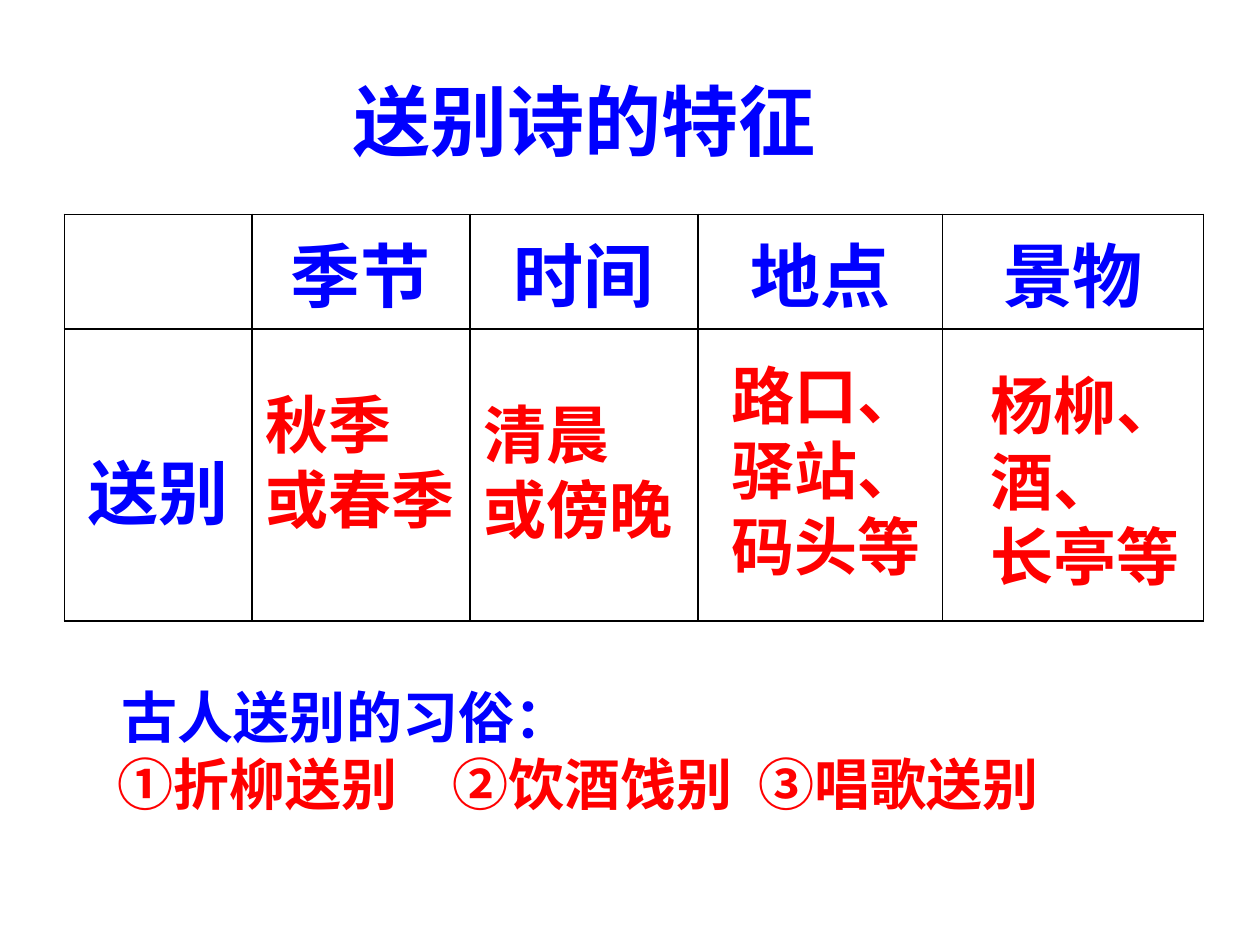
from dataclasses import dataclass

from lxml import etree
from pptx import Presentation
from pptx.dml.color import RGBColor
from pptx.enum.text import MSO_ANCHOR, PP_ALIGN
from pptx.oxml.ns import qn
from pptx.util import Cm, Pt

MIDDLE, BOTTOM = MSO_ANCHOR.MIDDLE, MSO_ANCHOR.BOTTOM
CENTER, LEFT = PP_ALIGN.CENTER, PP_ALIGN.LEFT


@dataclass(frozen=True)
class Theme:
    font: str = "Noto Sans CJK SC"
    blue: RGBColor = RGBColor(0, 0, 255)
    red: RGBColor = RGBColor(255, 0, 0)
    rule: str = "000000"
    title: int = 44
    head: int = 40
    body: int = 36
    note: int = 32
    lead: float = 1.2


THEME = Theme()


def add_run(para, text, size, color):
    run = para.add_run()
    run.text = text
    font = run.font
    font.name, font.size, font.bold = THEME.font, Pt(size), True
    font.color.rgb = color
    east = etree.SubElement(run._r.get_or_add_rPr(), qn("a:ea"))
    east.set("typeface", THEME.font)


def set_line(para, text, size, color, align=LEFT):
    para.alignment = align
    para.line_spacing = Pt(size * THEME.lead)
    add_run(para, text, size, color)


def add_box(slide, box):
    frame = slide.shapes.add_textbox(*map(Cm, box)).text_frame
    frame.word_wrap = True
    frame.margin_top, frame.margin_right = Cm(0.25), 0
    return frame


def add_lines(frame, lines, size):
    for i, (text, color) in enumerate(lines):
        para = frame.add_paragraph() if i else frame.paragraphs[0]
        set_line(para, text, size, color)


def add_title(slide, box, text):
    frame = slide.shapes.add_textbox(*map(Cm, box)).text_frame
    frame.word_wrap = True
    frame.vertical_anchor = MIDDLE
    para = frame.paragraphs[0]
    para.alignment = CENTER
    add_run(para, text, THEME.title, THEME.blue)


def set_edges(cell):
    props = cell._tc.get_or_add_tcPr()
    for i, side in enumerate(("lnL", "lnR", "lnT", "lnB")):
        line = etree.Element(qn(f"a:{side}"), w=str(Pt(1)))
        fill = etree.SubElement(line, qn("a:solidFill"))
        etree.SubElement(fill, qn("a:srgbClr"), val=THEME.rule)
        props.insert(i, line)


def add_grid(slide, left, top, cols, rows, words):
    shape = slide.shapes.add_table(len(rows), len(cols), Cm(left), Cm(top),
                                   Cm(sum(cols)), Cm(sum(rows)))
    table = shape.table
    table.first_row = table.horz_banding = False
    for col, width in zip(table.columns, cols):
        col.width = Cm(width)
    for row, height in zip(table.rows, rows):
        row.height = Cm(height)
    for cell in table.iter_cells():
        cell.fill.background()
        set_edges(cell)
    for (row, col), word in words.items():
        cell = table.cell(row, col)
        cell.vertical_anchor = BOTTOM
        if row:
            cell.margin_bottom = Cm(1.65)
        set_line(cell.text_frame.paragraphs[0], word,
                 THEME.head, THEME.blue, CENTER)


def add_notes(slide, box, head, items, stops):
    frame = add_box(slide, box)
    frame.margin_left = Cm(1.27)
    add_lines(frame, [(head, THEME.blue), ("\t".join(items), THEME.red)],
              THEME.note)
    first, second = frame.paragraphs
    first._p.get_or_add_pPr().set("marL", str(Cm(0.1)))
    tabs = etree.SubElement(second._p.get_or_add_pPr(), qn("a:tabLst"))
    for stop in stops:
        etree.SubElement(tabs, qn("a:tab"), pos=str(Cm(stop)), algn="l")


def main():
    deck = Presentation()
    deck.slide_width, deck.slide_height = Cm(25.4), Cm(19.05)
    slide = deck.slides.add_slide(deck.slide_layouts[6])

    # Title
    add_title(slide, (2.69, 1.12, 18.21, 2.57), "送别诗的特征")

    # Table with its headings
    words = {(0, i): word for i, word in
             enumerate(("季节", "时间", "地点", "景物"), 1)}
    words[1, 0] = "送别"
    add_grid(slide, 1.3, 4.32, (3.78, 4.39, 4.6, 4.93, 5.26),
             (2.31, 5.89), words)

    # Answers laid over the lower row
    answers = (
        ((5.11, 7.52, 5.61, 3.3), ("秋季", "或春季")),
        ((9.5, 7.72, 5.61, 3.3), ("清晨", "或傍晚")),
        ((14.5, 6.93, 4.34, 4.83), ("路口、", "驿站、", "码头等")),
        ((19.71, 7.14, 4.37, 4.88), ("杨柳、", "酒、", "长亭等")),
    )
    for box, lines in answers:
        add_lines(add_box(slide, box), [(line, THEME.red) for line in lines],
                  THEME.body)

    # Farewell customs
    add_notes(slide, (1.09, 13.51, 23.7, 2.97), "古人送别的习俗：",
              ("①折柳送别", "②饮酒饯别", "③唱歌送别"), (6.76, 12.93))

    deck.save("out.pptx")


if __name__ == "__main__":
    main()
